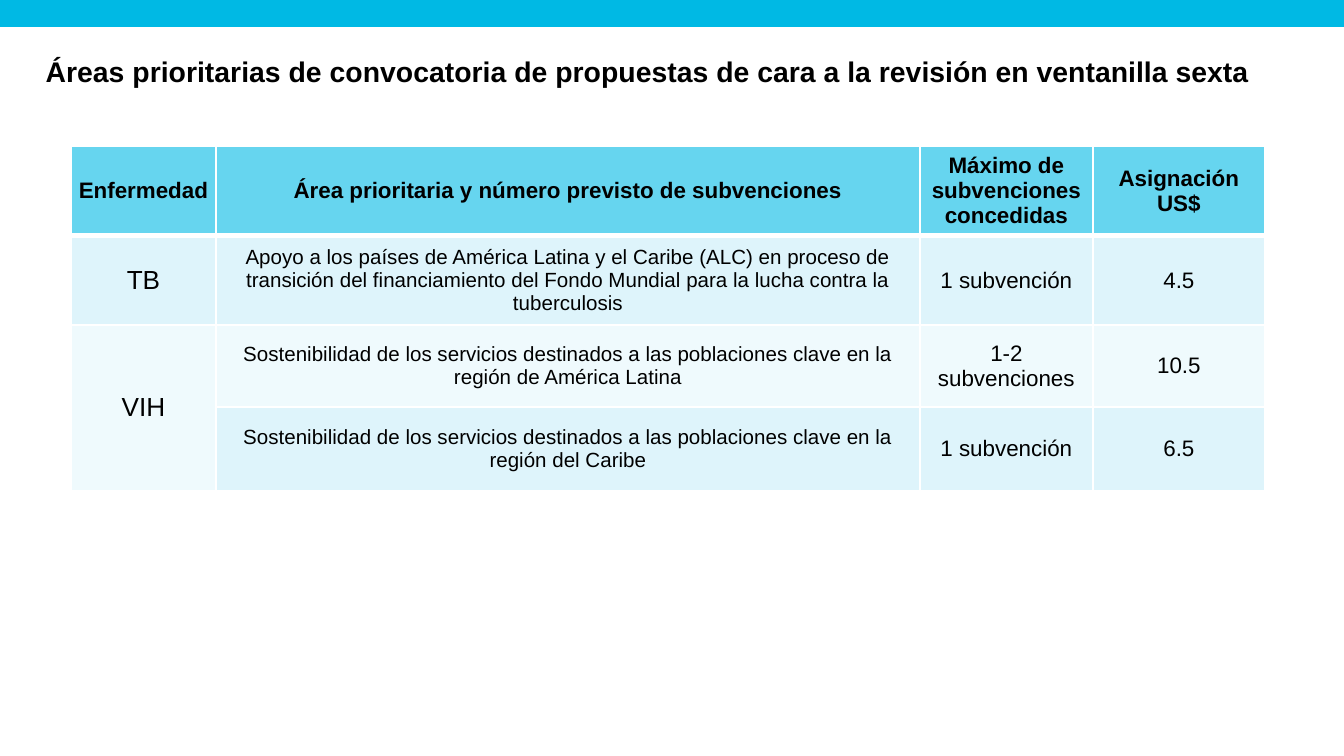
"""Build a slide with a table of priority areas and planned grants."""
from lxml.etree import SubElement
from pptx import Presentation
from pptx.dml.color import RGBColor
from pptx.enum.shapes import MSO_SHAPE as Shape
from pptx.enum.text import MSO_ANCHOR as Anchor, PP_ALIGN as Align
from pptx.oxml.ns import qn
from pptx.util import Pt

PX = 914400 / 134.4
FONT = "Arial"
COLORS = {"bar": "00B9E4", "header": "66D5EF", "odd": "DEF4FB",
          "even": "EFFAFD", "text": "000000", "border": "FFFFFF"}
TITLE = ("Áreas prioritarias de convocatoria de propuestas de cara "
         "a la revisión en ventanilla sexta")
HEADER = ("Enfermedad", "Área prioritaria y número previsto de subvenciones",
          "Máximo de subvenciones concedidas", "Asignación\nUS$")
ROWS = [
    ("TB", "Apoyo a los países de América Latina y el Caribe (ALC) en proceso de "
     "transición del financiamiento del Fondo Mundial para la lucha contra la "
     "tuberculosis", "1 subvención", "4.5"),
    ("VIH", "Sostenibilidad de los servicios destinados a las poblaciones clave "
     "en la región de América Latina", "1-2 subvenciones", "10.5"),
    ("", "Sostenibilidad de los servicios destinados a las poblaciones clave "
     "en la región del Caribe", "1 subvención", "6.5"),
]
COLUMN_WIDTHS = (145, 704, 173, 172)
ROW_HEIGHTS = (90, 89, 82, 84)
HEADER_SIZE = 12
COLUMN_SIZES = (14, 11, 12, 12)


def px(*lengths):
    return [round(length * PX) for length in lengths]


def color(name):
    return RGBColor.from_string(COLORS[name])


def write(frame, text, size=12, bold=False):
    for index, line in enumerate(text.split("\n")):
        para = frame.add_paragraph() if index else frame.paragraphs[0]
        para.alignment = Align.CENTER
        para.font.size = Pt(size)
        span = para.add_run()
        span.text = line
        span.font.name, span.font.size, span.font.bold = FONT, Pt(size), bold
        span.font.color.rgb = color("text")


def set_borders(cell, bottom=1):
    properties = cell._tc.get_or_add_tcPr()
    for side, width in (("L", 1), ("R", 1), ("T", 1), ("B", bottom)):
        line = SubElement(properties, qn(f"a:ln{side}"), w=str(Pt(width)))
        fill = SubElement(line, qn("a:solidFill"))
        SubElement(fill, qn("a:srgbClr"), val=COLORS["border"])


def add_bar(slide):
    bar = slide.shapes.add_shape(Shape.RECTANGLE, *px(0, 0, 1344, 27))
    bar.shadow.inherit = False
    bar.fill.solid()
    bar.fill.fore_color.rgb = color("bar")
    bar.line.fill.background()


def add_title(slide):
    box = slide.shapes.add_textbox(*px(32, 54, 1232, 52))
    frame = box.text_frame
    frame.word_wrap = True
    frame.margin_left = frame.margin_right = frame.margin_top = 0
    write(frame, TITLE, size=15.2, bold=True)


def add_grants_table(slide):
    size = px(71, 146, sum(COLUMN_WIDTHS), sum(ROW_HEIGHTS))
    table = slide.shapes.add_table(len(ROW_HEIGHTS), len(COLUMN_WIDTHS), *size).table
    for column, width in zip(table.columns, px(*COLUMN_WIDTHS)):
        column.width = width
    for row, height in zip(table.rows, px(*ROW_HEIGHTS)):
        row.height = height
    for r, texts in enumerate([HEADER, *ROWS]):
        for c, text in enumerate(texts):
            cell = table.cell(r, c)
            is_header = r == 0
            side = 0 if is_header and c == 0 else 9
            cell.margin_left, cell.margin_right = px(side, side)
            cell.margin_top, cell.margin_bottom = px(5, 5)
            cell.vertical_anchor = Anchor.MIDDLE
            set_borders(cell, bottom=3 if is_header else 1)
            cell.fill.solid()
            band = "header" if is_header else "odd" if r % 2 else "even"
            cell.fill.fore_color.rgb = color(band)
            if text:
                write(cell.text_frame, text, bold=is_header,
                      size=HEADER_SIZE if is_header else COLUMN_SIZES[c])
    table.cell(2, 0).merge(table.cell(3, 0))


def main():
    deck = Presentation()
    deck.slide_width, deck.slide_height = px(1344, 756)
    slide = deck.slides.add_slide(deck.slide_layouts[6])
    add_bar(slide)
    add_grants_table(slide)
    add_title(slide)
    deck.save("out.pptx")


if __name__ == "__main__":
    main()
